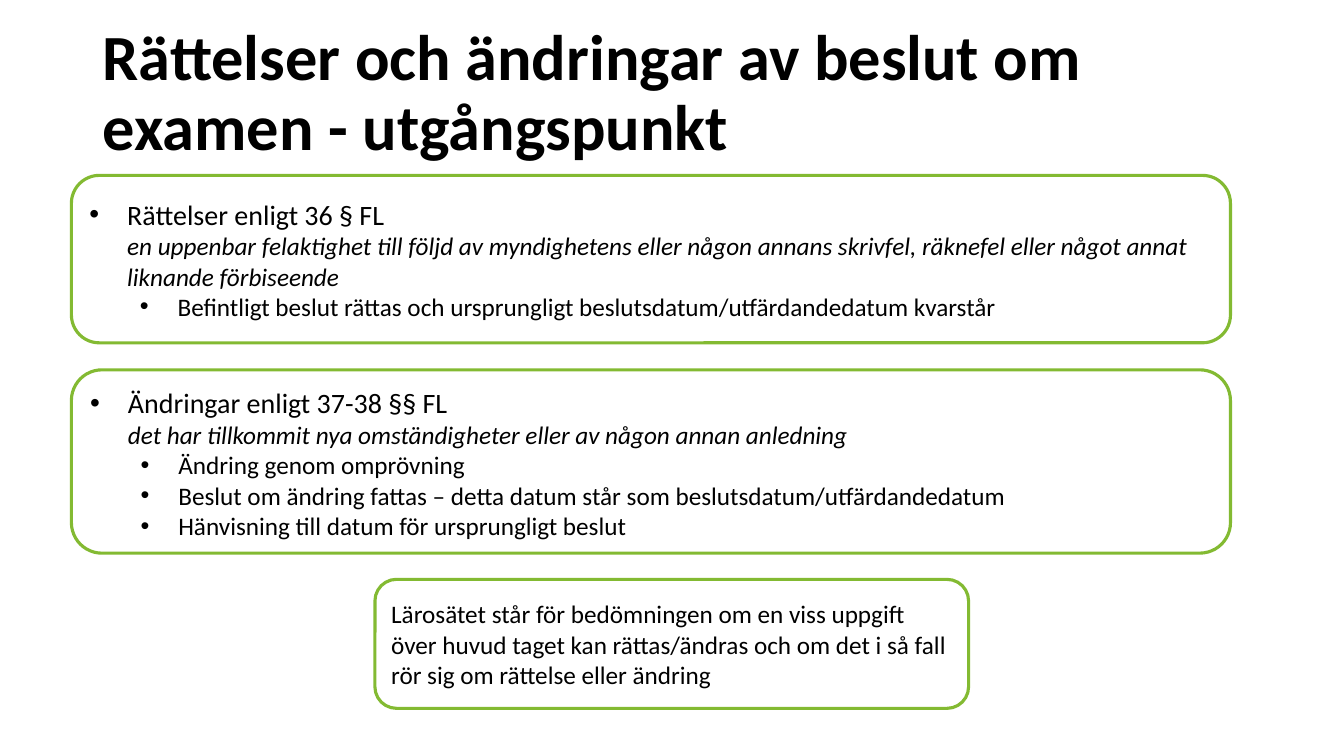
from dataclasses import dataclass

from lxml import etree
from pptx import Presentation
from pptx.dml.color import RGBColor
from pptx.enum.shapes import MSO_SHAPE
from pptx.enum.text import MSO_ANCHOR, PP_ALIGN
from pptx.oxml.ns import qn
from pptx.slide import Slide
from pptx.text.text import Font
from pptx.util import Cm, Pt

ROUNDED = MSO_SHAPE.ROUNDED_RECTANGLE
MIDDLE = MSO_ANCHOR.MIDDLE
LEFT = PP_ALIGN.LEFT

COLORS = {"text": "000000", "fill": "FFFFFF", "border": "83BA32"}
FONT = "Calibri"
HEADING_SIZE, BODY_SIZE, TITLE_SIZE = 20, 18, 46
HANGING = 0.95
SUB_INDENT = 2.22
PANEL_LEFT, PANEL_WIDTH = 1.8, 29.21
DEFAULT_INSET = 0.13


@dataclass
class Line:
    text: str
    level: int | None = None  # None means no bullet
    quote: str = ""  # set in italics below the text


@dataclass
class Panel:
    left: float
    top: float
    width: float
    height: float
    lines: list[Line]
    top_inset: float = DEFAULT_INSET


PANELS = [
    Panel(PANEL_LEFT, 4.42, PANEL_WIDTH, 4.22, [
        Line("Rättelser enligt 36 § FL", 0,
             "en uppenbar felaktighet till följd av myndighetens eller någon annans "
             "skrivfel, räknefel eller något annat liknande förbiseende"),
        Line("Befintligt beslut rättas och ursprungligt "
             "beslutsdatum/utfärdandedatum kvarstår", 1),
    ]),
    Panel(PANEL_LEFT, 9.32, PANEL_WIDTH, 4.62, [
        Line("Ändringar enligt 37-38 §§ FL", 0,
             "det har tillkommit nya omständigheter eller av någon annan anledning"),
        Line("Ändring genom omprövning", 1),
        Line("Beslut om ändring fattas – detta datum står som "
             "beslutsdatum/utfärdandedatum", 1),
        Line("Hänvisning till datum för ursprungligt beslut", 1),
    ], top_inset=0.21),
    Panel(9.45, 14.6, 14.96, 3.25, [
        Line("Lärosätet står för bedömningen om en viss uppgift över huvud taget kan "
             "rättas/ändras och om det i så fall rör sig om rättelse eller ändring"),
    ]),
]


def style_font(font: Font, size: int, bold: bool = False, italic: bool = False) -> None:
    font.name = FONT
    font.size = Pt(size)
    font.bold = bold
    font.italic = italic
    font.color.rgb = RGBColor.from_string(COLORS["text"])


def add_bullet(para, level: int) -> None:
    para.level = level
    properties = para._p.get_or_add_pPr()
    properties.set("marL", str(Cm(SUB_INDENT if level else HANGING)))
    properties.set("indent", str(-Cm(HANGING)))
    etree.SubElement(properties, qn("a:buFont")).set("typeface", "Arial")
    etree.SubElement(properties, qn("a:buChar")).set("char", "•")


def add_title(page: Slide, text: str) -> None:
    box = page.shapes.add_textbox(Cm(2.34), Cm(1.37), Cm(29.21), Cm(2.03))
    frame = box.text_frame
    frame.word_wrap = True
    frame.vertical_anchor = MIDDLE
    frame.text = text
    para = frame.paragraphs[0]
    para.line_spacing = 0.9
    style_font(para.runs[0].font, TITLE_SIZE, bold=True)


def add_panel(page: Slide, panel: Panel) -> None:
    box = page.shapes.add_shape(ROUNDED, Cm(panel.left), Cm(panel.top),
                                Cm(panel.width), Cm(panel.height))
    box.shadow.inherit = False
    box.fill.solid()
    box.fill.fore_color.rgb = RGBColor.from_string(COLORS["fill"])
    box.line.color.rgb = RGBColor.from_string(COLORS["border"])
    box.line.width = Pt(2.25)
    frame = box.text_frame
    frame.word_wrap = True
    frame.vertical_anchor = MIDDLE
    frame.margin_top = Cm(panel.top_inset)
    for index, line in enumerate(panel.lines):
        para = frame.add_paragraph() if index else frame.paragraphs[0]
        para.text = f"{line.text}\v{line.quote}" if line.quote else line.text
        para.alignment = LEFT
        if line.level is not None:
            add_bullet(para, line.level)
        style_font(para.runs[0].font, HEADING_SIZE if line.level == 0 else BODY_SIZE)
        for quote in para.runs[1:]:
            style_font(quote.font, BODY_SIZE, italic=True)


def main() -> None:
    deck = Presentation()
    deck.slide_width, deck.slide_height = Cm(33.87), Cm(19.05)
    page = deck.slides.add_slide(deck.slide_layouts[6])
    add_title(page, "Rättelser och ändringar av beslut om examen - utgångspunkt")
    for panel in PANELS:
        add_panel(page, panel)
    deck.save("out.pptx")


if __name__ == "__main__":
    main()
